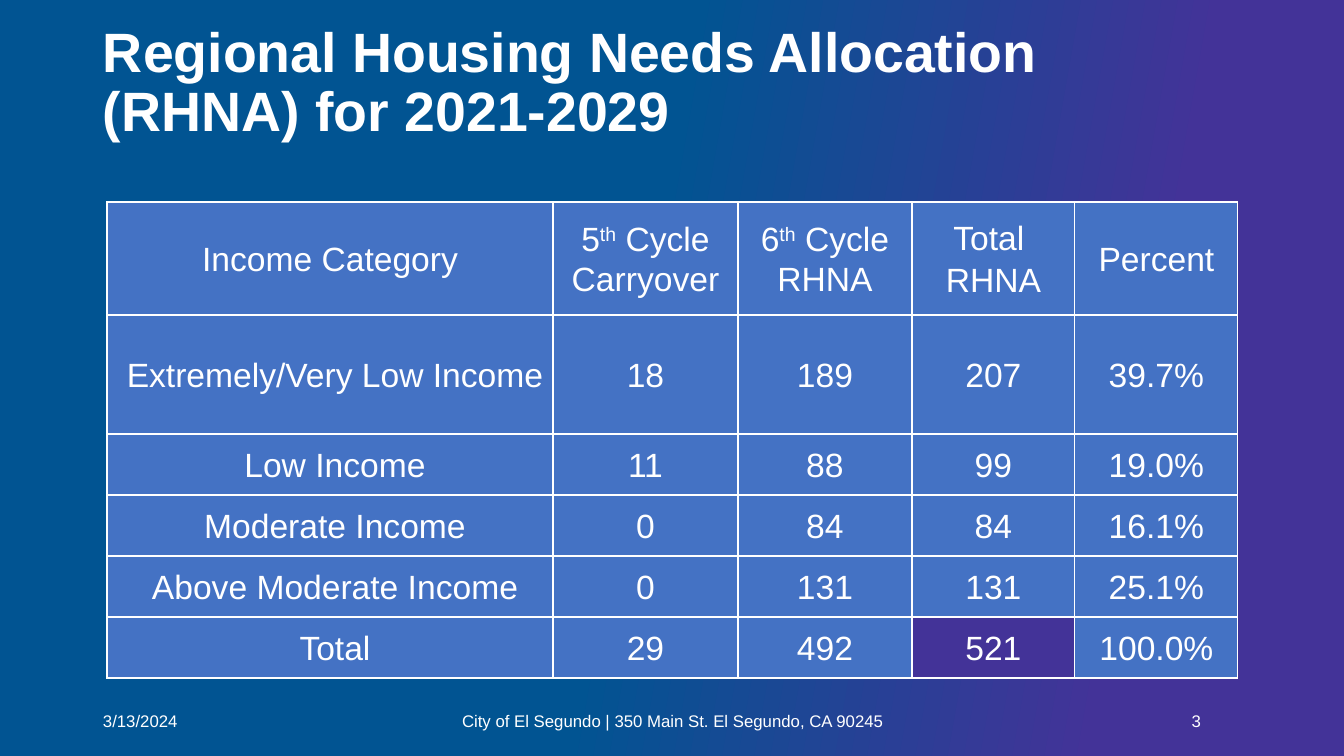
from pptx import Presentation
from pptx.dml.color import RGBColor
from pptx.enum.text import MSO_ANCHOR as Anchor, PP_ALIGN as Align
from pptx.oxml import parse_xml
from pptx.oxml.ns import nsdecls
from pptx.util import Emu, Pt

COLORS = {"text": "FFFFFF", "blue": "015492", "purple": "433398", "cell": "4472C4"}
SLIDE_W, SLIDE_H = 1344, 756
MARGIN = 10

COLUMNS = [446, 185, 174, 163, 163]
ROWS = [113, 119, 61, 61, 61, 61]
ALLOCATION = [
    ["Income Category", "5^th^ Cycle Carryover", "6^th^ Cycle RHNA", "Total \nRHNA", "Percent"],
    ["Extremely/Very Low Income", "18", "189", "207", "39.7%"],
    ["Low Income", "11", "88", "99", "19.0%"],
    ["Moderate Income", "0", "84", "84", "16.1%"],
    ["Above Moderate Income", "0", "131", "131", "25.1%"],
    ["Total", "29", "492", "521", "100.0%"],
]
GRAND_TOTAL = (5, 3)


def px(length):
    return Emu(round(length * 914400 / 100.8))


def rgb(name):
    return RGBColor.from_string(COLORS[name])


def write(frame, text, size, bold=False, align=Align.LEFT, spacing=1.0, gap=0):
    frame.word_wrap = True
    for index, line in enumerate(text.split("\n")):
        paragraph = frame.add_paragraph() if index else frame.paragraphs[0]
        paragraph.alignment = align
        paragraph.line_spacing = spacing
        if index:
            paragraph.space_before = Pt(gap)
        for part, words in enumerate(line.split("^")):
            run = paragraph.add_run()
            run.text = words
            run.font.name = "Arial"
            run.font.size = Pt(size)
            run.font.bold = bold
            run.font.color.rgb = rgb("text")
            if part % 2:
                run._r.get_or_add_rPr().set("baseline", "30000")


def add_text(slide, box, text, **style):
    frame = slide.shapes.add_textbox(*map(px, box)).text_frame
    frame.vertical_anchor = Anchor.MIDDLE
    frame.margin_left = frame.margin_right = px(MARGIN)
    write(frame, text, **style)
    return frame


def add_background(slide):
    fill = slide.background.fill
    fill.gradient()
    fill.gradient_angle = 350
    for stop, (name, position) in zip(fill.gradient_stops, [("blue", 0.47), ("purple", 0.83)]):
        stop.color.rgb = rgb(name)
        stop.position = position


def add_title(slide, box):
    title = add_text(slide, box, "Regional Housing Needs Allocation (RHNA) for 2021-2029",
                     size=39.6, bold=True, spacing=0.9)
    title.margin_top = 0
    title.margin_bottom = px(58)
    title.margin_right = px(2 * MARGIN)


def add_borders(cell):
    properties = cell._tc.get_or_add_tcPr()
    for side in "LRTB":
        properties.append(parse_xml(
            f'<a:ln{side} {nsdecls("a")} w="{Pt(1)}"><a:solidFill>'
            f'<a:srgbClr val="{COLORS["text"]}"/></a:solidFill></a:ln{side}>'))


def add_allocation_table(slide, left, top):
    box = left, top, sum(COLUMNS), sum(ROWS)
    table = slide.shapes.add_table(len(ROWS), len(COLUMNS), *map(px, box)).table
    table.horz_banding = False
    for column, width in zip(table.columns, COLUMNS):
        column.width = px(width)
    for row, height in zip(table.rows, ROWS):
        row.height = px(height)
    for r, values in enumerate(ALLOCATION):
        for c, value in enumerate(values):
            cell = table.cell(r, c)
            cell.margin_right = cell.margin_top = cell.margin_bottom = 0
            cell.margin_left = px(MARGIN) if r and c == 0 else 0
            cell.vertical_anchor = Anchor.MIDDLE
            add_borders(cell)
            cell.fill.solid()
            cell.fill.fore_color.rgb = rgb("purple" if (r, c) == GRAND_TOTAL else "cell")
            write(cell.text_frame, value, size=24, align=Align.CENTER, spacing=1.07, gap=1.8)


def add_footer(slide, left, top, height):
    for offset, width, text, align in [
        (0, 302, "3/13/2024", Align.LEFT),
        (353, 454, "City of El Segundo | 350 Main St. El Segundo, CA 90245", Align.CENTER),
        (1071, 47, "3", Align.RIGHT),
    ]:
        add_text(slide, (left + offset, top, width, height), text, size=12, align=align)


def main():
    deck = Presentation()
    deck.slide_width, deck.slide_height = px(SLIDE_W), px(SLIDE_H)
    slide = deck.slides.add_slide(deck.slide_layouts[6])
    add_background(slide)
    add_title(slide, (93, 40, 1159, 146))
    add_allocation_table(slide, 107, 202)
    add_footer(slide, 93, 701, 40)
    deck.save("out.pptx")


if __name__ == "__main__":
    main()
